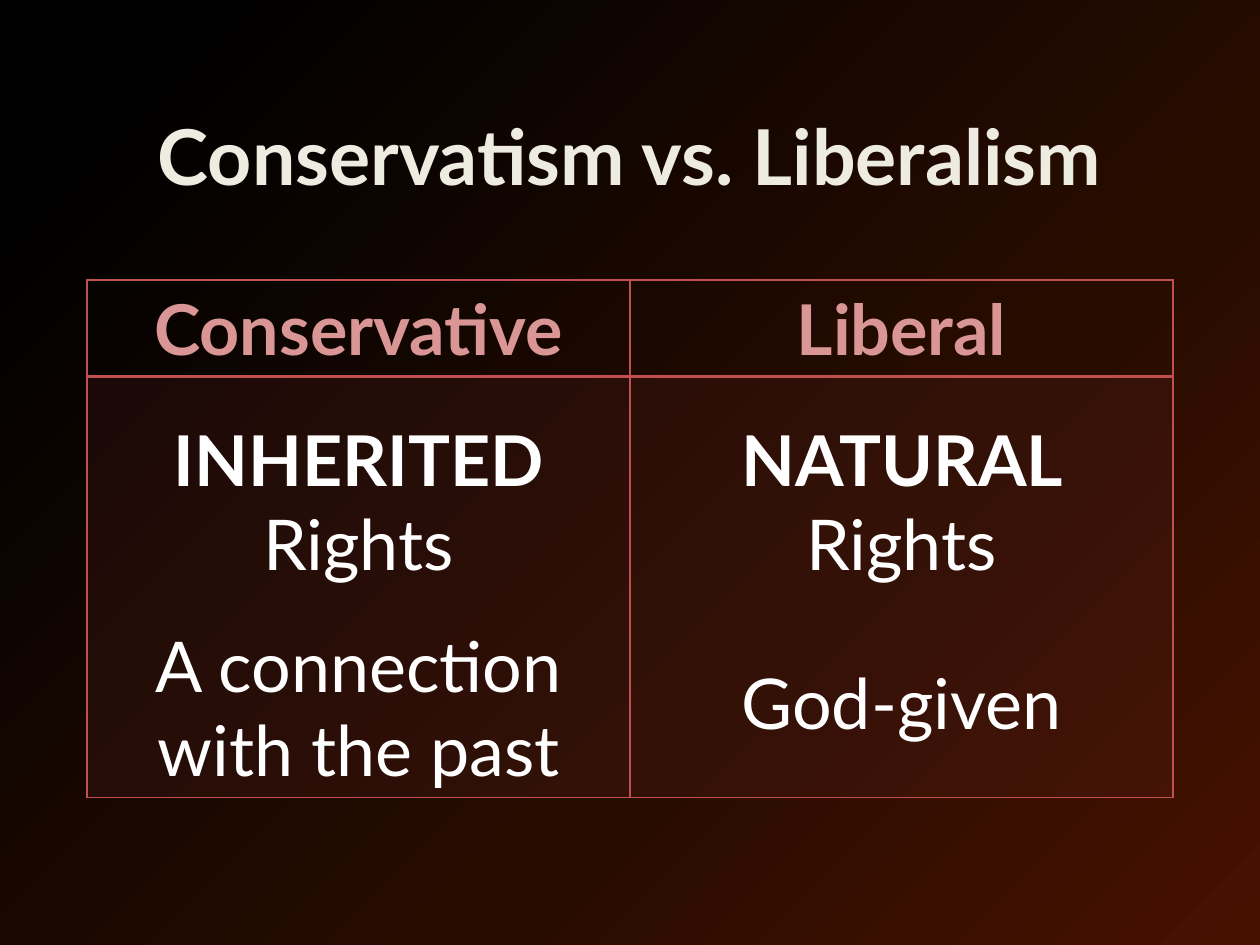
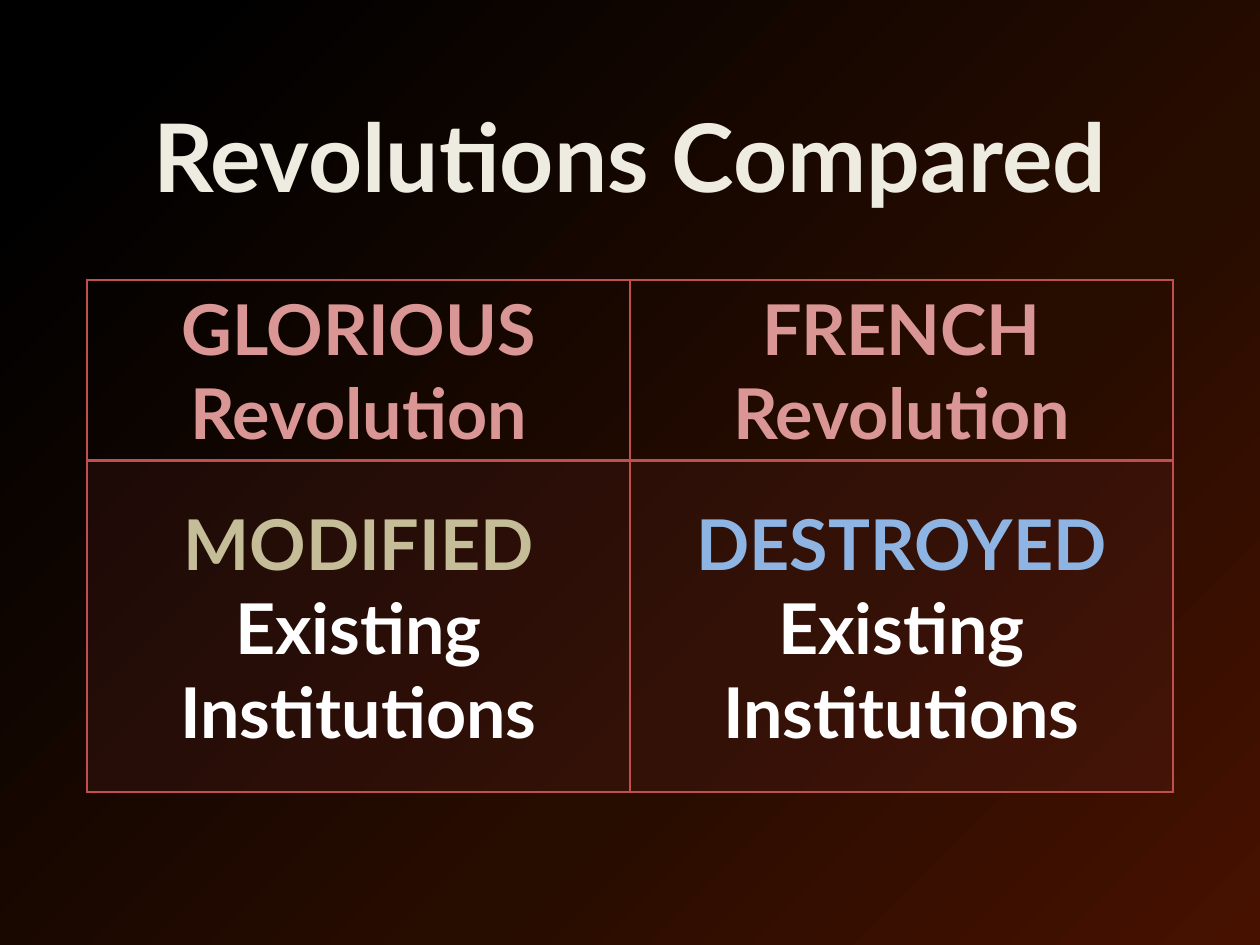
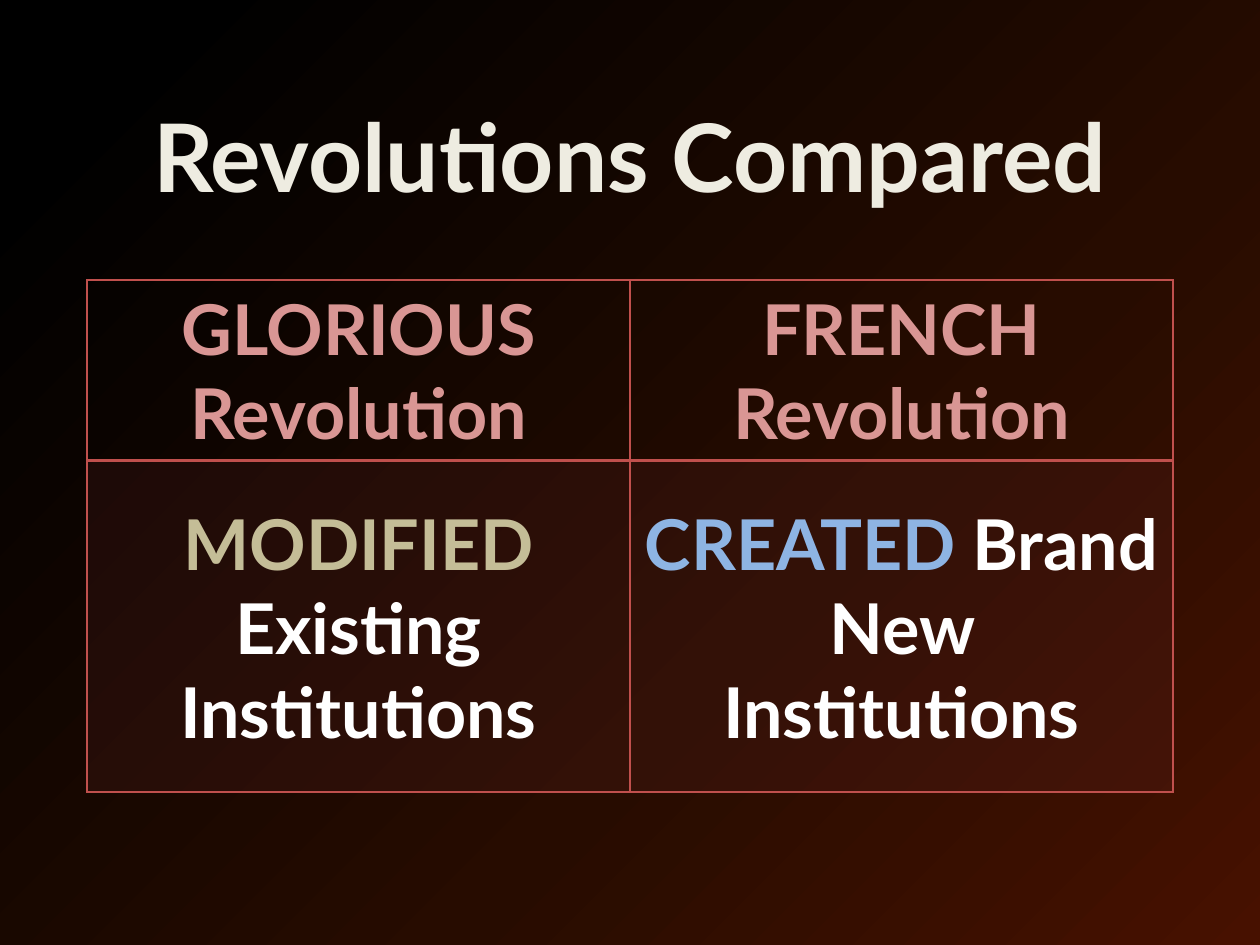
import copy
from dataclasses import dataclass

import lxml.etree
import pptx
import pptx.dml.color
import pptx.enum.text
import pptx.oxml.ns
import pptx.slide
import pptx.table
import pptx.text.text
import pptx.util

RGBColor = pptx.dml.color.RGBColor
qn = pptx.oxml.ns.qn

EMU_PER_PX = 914400 / 126
FONT = "Lato"
BODY_SIZE = 40

BLACK = RGBColor(0x00, 0x00, 0x00)
BROWN = RGBColor(0x27, 0x0C, 0x00)
EMBER = RGBColor(0x47, 0x11, 0x00)
IVORY = RGBColor(0xEE, 0xEC, 0xE1)
ROSE = RGBColor(0xD9, 0x96, 0x94)
WHITE = RGBColor(0xFF, 0xFF, 0xFF)
TAN = RGBColor(0xC4, 0xBD, 0x97)
SKY = RGBColor(0x8E, 0xB4, 0xE3)
BORDER_RED = RGBColor(0xC0, 0x50, 0x4D)
MAROON = RGBColor(0x63, 0x25, 0x23)

BACKDROP = [(0, BLACK), (0.09, BLACK), (0.63, BROWN), (1, EMBER)]
TABLE_LEFT, TABLE_TOP, COLUMN_WIDTH = 87, 280, 543
CELL_SIDE, CELL_EDGE, BODY_TOP = 13, 6, 40


@dataclass(frozen=True)
class Phrase:
    text: str
    bold: bool = True
    color: RGBColor = WHITE


@dataclass(frozen=True)
class Line:
    phrases: tuple[Phrase, ...]
    gap: int = 0


@dataclass(frozen=True)
class Side:
    heading: str
    lines: tuple[Line, ...]


@dataclass(frozen=True)
class Comparison:
    title: str
    title_size: int
    row_heights: tuple[int, int]
    sides: tuple[Side, Side]


def rights(kind: str, origin: str, gap: int) -> tuple[Line, ...]:
    return (
        Line((Phrase(f"{kind} "), Phrase("Rights", bold=False))),
        Line((Phrase(origin, bold=False),), gap),
    )


def outcome(verb: str, color: RGBColor, rest: str) -> tuple[Line, ...]:
    return (Line((Phrase(f"{verb} ", color=color), Phrase(rest))),)


def revolutions(french_outcome: tuple[Line, ...]) -> Comparison:
    glorious_outcome = outcome("MODIFIED", TAN, "Existing Institutions")
    return Comparison(
        "Revolutions Compared", 54, (181, 331),
        (Side("GLORIOUS Revolution", glorious_outcome),
         Side("FRENCH Revolution", french_outcome)),
    )


COMPARISONS = [
    Comparison(
        "Conservatism vs. Liberalism", 44, (97, 420),
        (Side("Conservative", rights("INHERITED", "A connection with the past", 22)),
         Side("Liberal", rights("NATURAL", "God-given", 43))),
    ),
    revolutions(outcome("DESTROYED", SKY, "Existing Institutions")),
    revolutions(outcome("CREATED", SKY, "Brand New Institutions")),
]


def px(length: int) -> pptx.util.Emu:
    return pptx.util.Emu(round(length * EMU_PER_PX))


def paint_backdrop(master: pptx.slide.SlideMaster) -> None:
    fill = master.background.fill
    fill.gradient()
    fill.gradient_angle = 315
    stop_list = master.element.find(".//" + qn("a:gsLst"))
    while len(stop_list) < len(BACKDROP):
        stop_list.append(copy.deepcopy(stop_list[0]))
    for stop, (position, color) in zip(fill.gradient_stops, BACKDROP):
        stop.color.rgb = color
        stop.position = position


def style_paragraph(paragraph: pptx.text.text._Paragraph, size: int, color: RGBColor) -> None:
    paragraph.alignment = pptx.enum.text.PP_ALIGN.CENTER
    paragraph.font.name = FONT
    paragraph.font.size = pptx.util.Pt(size)
    paragraph.font.color.rgb = color


def write_bold(paragraph: pptx.text.text._Paragraph, text: str, size: int, color: RGBColor) -> None:
    paragraph.text = text
    style_paragraph(paragraph, size, color)
    paragraph.font.bold = True


def write_lines(frame: pptx.text.text.TextFrame, lines: tuple[Line, ...]) -> None:
    for index, line in enumerate(lines):
        paragraph = frame.add_paragraph() if index else frame.paragraphs[0]
        style_paragraph(paragraph, BODY_SIZE, WHITE)
        if line.gap:
            paragraph.space_before = pptx.util.Pt(line.gap)
        for phrase in line.phrases:
            run = paragraph.add_run()
            run.text = phrase.text
            run.font.bold = phrase.bold
            if phrase.color != WHITE:
                run.font.color.rgb = phrase.color


def border_cell(cell: pptx.table._Cell, top: int, bottom: int) -> None:
    properties = cell._tc.get_or_add_tcPr()
    widths = {"a:lnL": 1, "a:lnR": 1, "a:lnT": top, "a:lnB": bottom}
    for index, (edge, width) in enumerate(widths.items()):
        line = lxml.etree.Element(qn(edge), w=str(pptx.util.Pt(width)))
        solid = lxml.etree.SubElement(line, qn("a:solidFill"))
        lxml.etree.SubElement(solid, qn("a:srgbClr"), val=str(BORDER_RED))
        properties.insert(index, line)


def tint_cell(cell: pptx.table._Cell) -> None:
    cell.fill.solid()
    cell.fill.fore_color.rgb = MAROON
    color = cell._tc.tcPr.find(".//" + qn("a:srgbClr"))
    lxml.etree.SubElement(color, qn("a:alpha"), val="20000")


def set_margins(cell: pptx.table._Cell, top: int) -> None:
    cell.margin_left = cell.margin_right = px(CELL_SIDE)
    cell.margin_top = px(top)
    cell.margin_bottom = px(CELL_EDGE)


def add_title(slide: pptx.slide.Slide, text: str, size: int) -> None:
    title = slide.shapes.add_textbox(px(0), px(63), px(1260), px(183)).text_frame
    title.word_wrap = True
    title.vertical_anchor = pptx.enum.text.MSO_ANCHOR.MIDDLE
    write_bold(title.paragraphs[0], text, size, IVORY)


def add_comparison_table(slide: pptx.slide.Slide, comparison: Comparison) -> None:
    heights = comparison.row_heights
    sides = comparison.sides
    table = slide.shapes.add_table(
        len(heights), len(sides), px(TABLE_LEFT), px(TABLE_TOP),
        px(COLUMN_WIDTH * len(sides)), px(sum(heights)),
    ).table
    table.first_row = table.horz_banding = False
    for row, height in zip(table.rows, heights):
        row.height = px(height)
    for column, side in enumerate(sides):
        table.columns[column].width = px(COLUMN_WIDTH)
        heading, body = table.cell(0, column), table.cell(1, column)

        heading.fill.background()
        set_margins(heading, CELL_EDGE)
        border_cell(heading, top=1, bottom=2)
        write_bold(heading.text_frame.paragraphs[0], side.heading, BODY_SIZE, ROSE)

        tint_cell(body)
        set_margins(body, BODY_TOP)
        border_cell(body, top=2, bottom=1)
        write_lines(body.text_frame, side.lines)


def main() -> None:
    deck = pptx.Presentation()
    deck.slide_width, deck.slide_height = px(1260), px(945)
    paint_backdrop(deck.slide_master)
    for comparison in COMPARISONS:
        slide = deck.slides.add_slide(deck.slide_layouts[6])
        add_title(slide, comparison.title, comparison.title_size)
        add_comparison_table(slide, comparison)
    deck.save("out.pptx")


if __name__ == "__main__":
    main()
